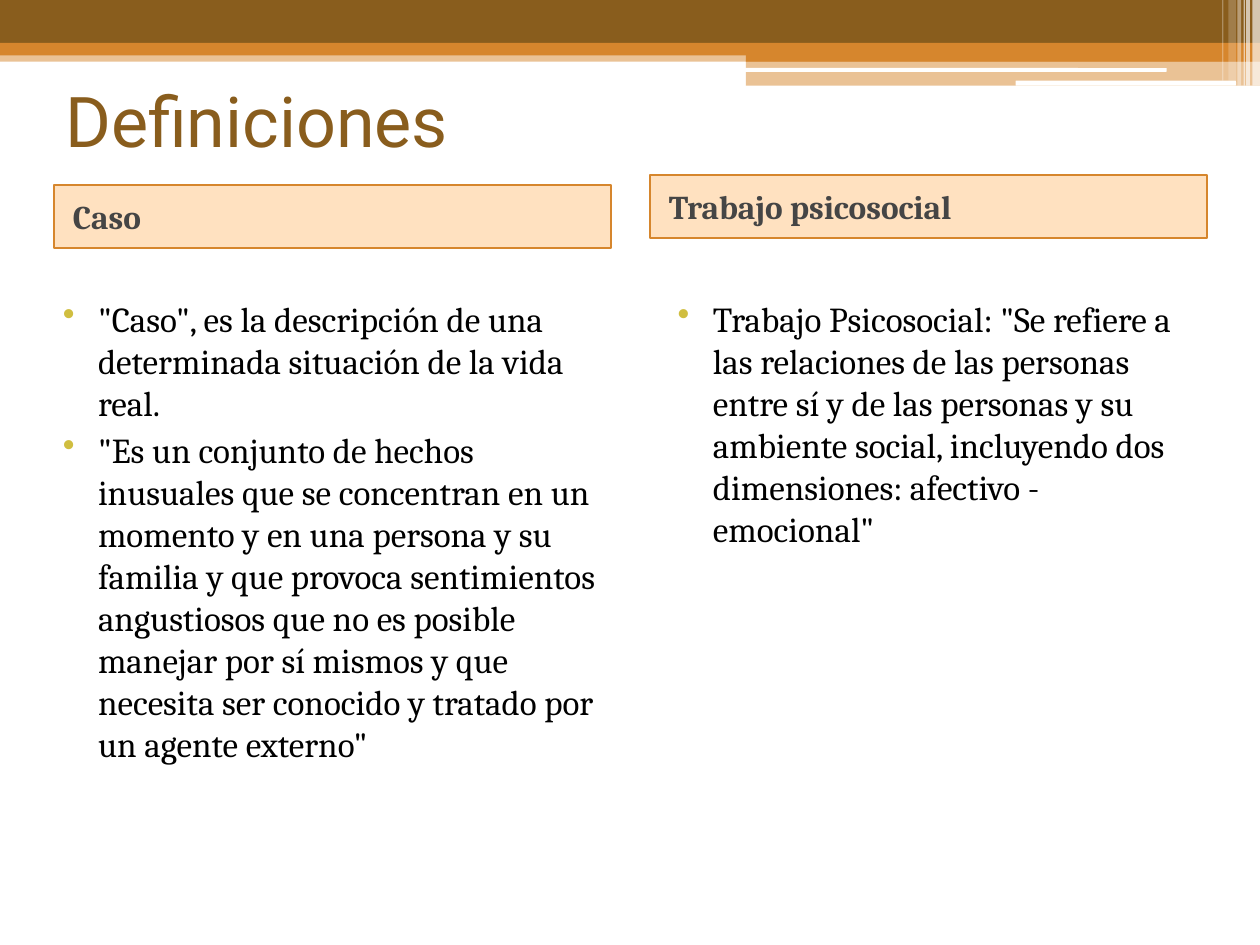
from dataclasses import dataclass
from lxml import etree
from pptx import Presentation, util as u
from pptx.dml.color import RGBColor
from pptx.enum import shapes, text
from pptx.oxml import ns


@dataclass(frozen=True)
class Theme:
    brown: str = "895D1D"
    orange: str = "D6862D"
    peach: str = "FF8804"
    white: str = "FFFFFF"
    black: str = "000000"
    gray: str = "454545"
    lime: str = "D0BE40"
    head: str = "Roboto"
    body: str = "Cambria"
    title: int = 40
    label: int = 19
    copy: int = 20
    gap: int = 3


@dataclass(frozen=True)
class Box:
    left: float
    top: float
    width: float
    height: float

    def emu(self) -> list:
        return [u.Inches(n) for n in (self.left, self.top, self.width, self.height)]


@dataclass(frozen=True)
class Bar:
    box: Box
    color: str
    alpha: int = 100
    round: bool = False
    line: str = ""


@dataclass(frozen=True)
class Column:
    label: str
    head: Box
    body: Box
    items: tuple


T = Theme()

BANDS = [
    Bar(Box(0, 0.4, 10, 0.09), T.orange, 50),
    Bar(Box(0, 0, 10, 0.34), T.brown),
    Bar(Box(0, 0.34, 10, 0.1), T.orange),
    Bar(Box(5.92, 0.39, 4.08, 0.1), T.orange),
    Bar(Box(5.92, 0.48, 4.08, 0.2), T.orange, 50),
    Bar(Box(5.91, 0.54, 3.35, 0.03), T.white, round=True),
    Bar(Box(8.06, 0.64, 1.75, 0.04), T.white, round=True),
]
STRIPES = [
    Bar(Box(left, 0, width, height), T.white, alpha)
    for left, width, height, alpha in (
        (9.94, 0.06, 0.68, 65),
        (9.89, 0.03, 0.68, 65),
        (9.87, 0.01, 0.68, 60),
        (9.82, 0.03, 0.68, 40),
        (9.75, 0.06, 0.64, 20),
        (9.7, 0.01, 0.64, 30),
    )
]
COLUMNS = [
    Column("Caso", Box(0.43, 1.47, 4.42, 0.5), Box(0.28, 2.31, 4.56, 4.9), (
        '"Caso", es la descripción de una determinada situación de la vida real.',
        '"Es un conjunto de hechos inusuales que se concentran en un momento y en '
        'una persona y su familia y que provoca sentimientos angustiosos que no es '
        'posible manejar por sí mismos y que necesita ser conocido y tratado por '
        'un agente externo"',
    )),
    Column("Trabajo psicosocial", Box(5.16, 1.39, 4.42, 0.5), Box(5.16, 2.31, 4.42, 4.9), (
        'Trabajo Psicosocial: "Se refiere a las relaciones de las personas entre sí '
        'y de las personas y su ambiente social, incluyendo dos dimensiones: '
        'afectivo - emocional"',
    )),
]


def rgb(code: str) -> RGBColor:
    return RGBColor.from_string(code)


def draw_bar(slide, bar: Bar):
    kind = shapes.MSO_SHAPE.ROUNDED_RECTANGLE if bar.round else shapes.MSO_SHAPE.RECTANGLE
    shape = slide.shapes.add_shape(kind, *bar.box.emu())
    shape.shadow.inherit = False
    shape.fill.solid()
    shape.fill.fore_color.rgb = rgb(bar.color)
    if bar.alpha < 100:
        tint = shape.fill._xPr.find(".//" + ns.qn("a:srgbClr"))
        etree.SubElement(tint, ns.qn("a:alpha"), val=str(bar.alpha * 1000))
    if bar.line:
        shape.line.color.rgb = rgb(bar.line)
        shape.line.width = u.Pt(1)
    else:
        shape.line.fill.background()
    return shape


def add_run(para, words: str, size: int, face: str, color: str, bold: bool = False) -> None:
    run = para.add_run()
    run.text = words
    run.font.size = u.Pt(size)
    run.font.name = face
    run.font.bold = bold
    run.font.color.rgb = rgb(color)


def indent(para, left: float, first: float = 0) -> None:
    props = para._p.get_or_add_pPr()
    props.set("marL", str(u.Inches(left)))
    props.set("indent", str(u.Inches(first)))
    para.space_before = u.Pt(T.gap)


def add_dot(para) -> None:
    props = para._p.get_or_add_pPr()
    paint = etree.SubElement(props, ns.qn("a:buClr"))
    etree.SubElement(paint, ns.qn("a:srgbClr"), val=T.lime)
    etree.SubElement(props, ns.qn("a:buChar"), char="•")


def add_frame(slide, box: Box, anchor):
    frame = slide.shapes.add_textbox(*box.emu()).text_frame
    frame.word_wrap = True
    frame.vertical_anchor = anchor
    return frame


def draw_title(slide, words: str) -> None:
    frame = add_frame(slide, Box(0.42, 0.36, 9.17, 1.17), text.MSO_ANCHOR.MIDDLE)
    add_run(frame.paragraphs[0], words, T.title, T.head, T.brown)


def draw_column(slide, col: Column) -> None:
    frame = draw_bar(slide, Bar(col.head, T.peach, 25, line=T.orange)).text_frame
    frame.word_wrap = True
    frame.vertical_anchor = text.MSO_ANCHOR.MIDDLE
    para = frame.paragraphs[0]
    para.alignment = text.PP_ALIGN.LEFT
    indent(para, 0.05)
    add_run(para, col.label, T.label, T.body, T.gray, True)

    frame = add_frame(slide, col.body, text.MSO_ANCHOR.TOP)
    for i, item in enumerate(col.items):
        para = frame.add_paragraph() if i else frame.paragraphs[0]
        indent(para, 0.4, -0.28)
        add_dot(para)
        add_run(para, item, T.copy, T.body, T.black)


def main() -> None:
    deck = Presentation()
    deck.slide_width, deck.slide_height = u.Inches(10), u.Inches(7.5)
    slide = deck.slides.add_slide(deck.slide_layouts[6])
    for bar in BANDS + STRIPES:
        draw_bar(slide, bar)
    draw_title(slide, "Definiciones")
    for col in COLUMNS:
        draw_column(slide, col)
    deck.save("out.pptx")


if __name__ == "__main__":
    main()
